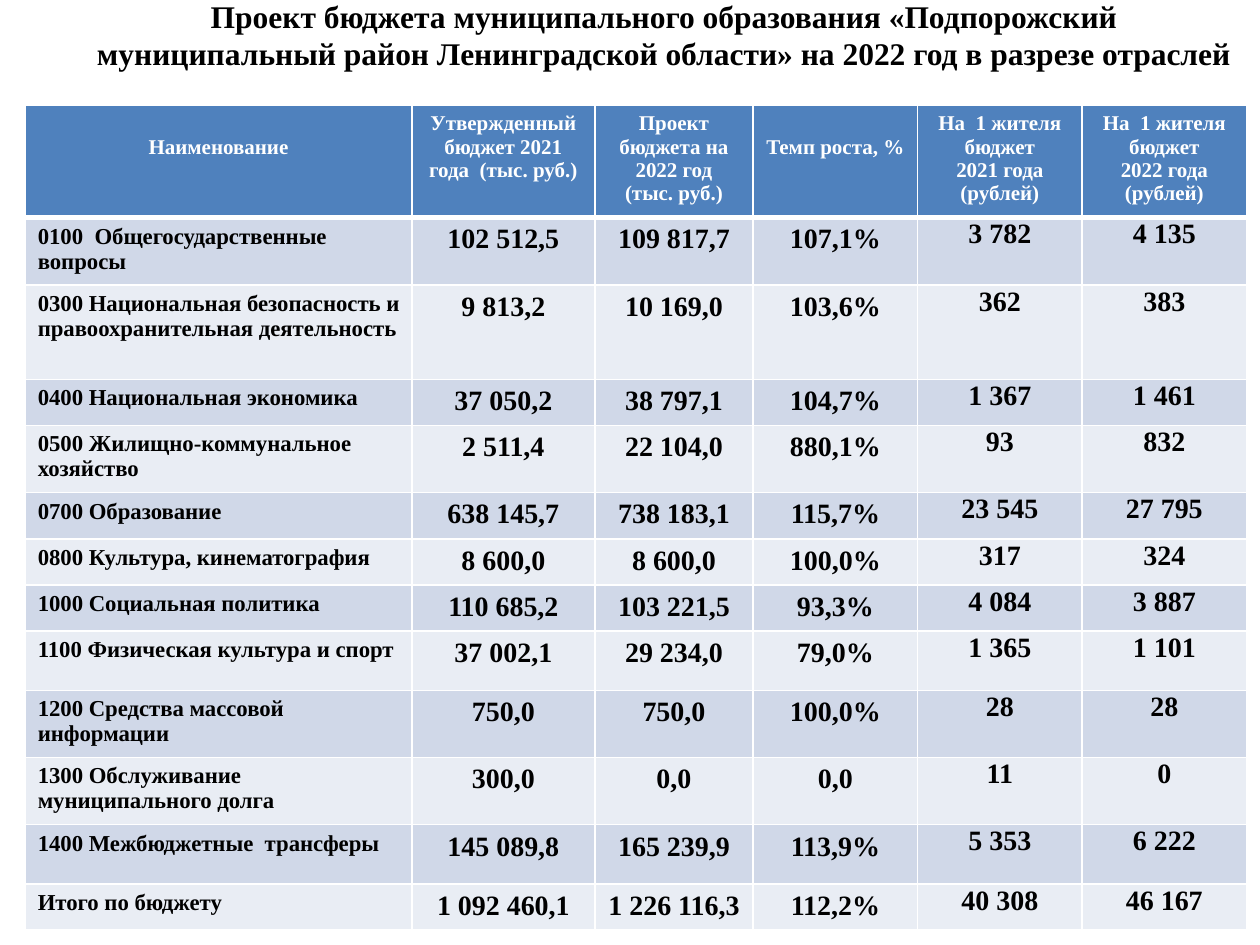
from lxml.etree import SubElement
from pptx import Presentation
from pptx.dml.color import RGBColor as Rgb
from pptx.enum.text import MSO_ANCHOR as Anchor, MSO_AUTO_SIZE as AutoSize, PP_ALIGN as Align
from pptx.oxml.ns import qn
from pptx.util import Pt

COLORS = {"header": "4F81BD", "band": "D0D8E8", "plain": "E9EDF4",
          "white": "FFFFFF", "black": "000000"}
TITLE = ("Проект бюджета муниципального образования «Подпорожский муниципальный район "
         "Ленинградской области» на 2022 год в разрезе отраслей")
HEADERS = ["Наименование", "Утвержденный бюджет 2021 года  (тыс. руб.)",
           "Проект бюджета на 2022 год\n(тыс. руб.)", "Темп роста, %",
           "На  1 жителя бюджет\n2021 года (рублей)",
           "На  1 жителя бюджет\n2022 года\n(рублей)"]
COLUMN_WIDTHS = [221, 104.5, 90.5, 94, 94, 94]
HEADER_HEIGHT = 64
# Row height, then the cells of the row
BUDGET = [
    (38.4, "0100  Общегосударственные вопросы", "102 512,5", "109 817,7", "107,1%", "3 782", "4 135"),
    (54, "0300 Национальная безопасность и правоохранительная деятельность",
     "9 813,2", "10 169,0", "103,6%", "362", "383"),
    (26.4, "0400 Национальная экономика", "37 050,2", "38 797,1", "104,7%", "1 367", "1 461"),
    (38.4, "0500 Жилищно-коммунальное хозяйство", "2 511,4", "22 104,0", "880,1%", "93", "832"),
    (26.4, "0700 Образование", "638 145,7", "738 183,1", "115,7%", "23 545", "27 795"),
    (26.4, "0800 Культура, кинематография", "8 600,0", "8 600,0", "100,0%", "317", "324"),
    (26.4, "1000 Социальная политика", "110 685,2", "103 221,5", "93,3%", "4 084", "3 887"),
    (33.8, "1100 Физическая культура и спорт", "37 002,1", "29 234,0", "79,0%", "1 365", "1 101"),
    (38.4, "1200 Средства массовой информации", "750,0", "750,0", "100,0%", "28", "28"),
    (38.4, "1300 Обслуживание муниципального долга", "300,0", "0,0", "0,0", "11", "0"),
    (33.8, "1400 Межбюджетные  трансферы", "145 089,8", "165 239,9", "113,9%", "5 353", "6 222"),
    (26.4, "Итого по бюджету", "1 092 460,1", "1 226 116,3", "112,2%", "40 308", "46 167"),
]


class BudgetPage:
    """Holds the text style and the slide being filled."""
    font_name = "Times New Roman"

    def __init__(self, deck):
        self.page = deck.slides.add_slide(deck.slide_layouts[5])

    def style_text(self, frame, size, color="black", align=Align.CENTER):
        for para in frame.paragraphs:
            para.alignment = align
            for span in para.runs:
                span.font.name = self.font_name
                span.font.size = Pt(size)
                span.font.bold = True
                span.font.color.rgb = Rgb.from_string(COLORS[color])

    def title(self, text, left, top, width, height):
        box = self.page.shapes.title
        box.left, box.top, box.width, box.height = map(Pt, (left, top, width, height))
        frame = box.text_frame
        frame.text = text
        frame.word_wrap = True
        frame.auto_size = AutoSize.NONE
        frame.vertical_anchor = Anchor.MIDDLE
        frame.margin_left = frame.margin_right = Pt(6)
        frame.margin_top, frame.margin_bottom = Pt(0), Pt(14)
        self.style_text(frame, 18)

    def borders(self, cell, bottom):
        properties = cell._tc.get_or_add_tcPr()
        for side, width in (("L", 1), ("R", 1), ("T", 1), ("B", bottom)):
            line = SubElement(properties, qn(f"a:ln{side}"), w=str(Pt(width)))
            fill = SubElement(line, qn("a:solidFill"))
            SubElement(fill, qn("a:srgbClr"), val=COLORS["white"])

    def cell(self, cell, text, fill, size, color="black", align=Align.CENTER, bottom=1):
        self.borders(cell, bottom)
        cell.fill.solid()
        cell.fill.fore_color.rgb = Rgb.from_string(COLORS[fill])
        cell.text_frame.text = text
        self.style_text(cell.text_frame, size, color, align)

    def table(self, left, top):
        heights = [HEADER_HEIGHT] + [row[0] for row in BUDGET]
        table = self.page.shapes.add_table(
            len(heights), len(HEADERS), Pt(left), Pt(top),
            Pt(sum(COLUMN_WIDTHS)), Pt(sum(heights))).table
        table.horz_banding = False
        for column, width in zip(table.columns, COLUMN_WIDTHS):
            column.width = Pt(width)
        for row, height in zip(table.rows, heights):
            row.height = Pt(height)

        for column, text in enumerate(HEADERS):
            cell = table.cell(0, column)
            self.cell(cell, text, "header", 12, "white", bottom=3)
            if text in ("Наименование", "Темп роста, %"):
                cell.margin_top = Pt(17.4)

        for number, (_, name, *values) in enumerate(BUDGET, 1):
            fill = "band" if number % 2 else "plain"
            self.cell(table.cell(number, 0), name, fill, 13, align=Align.LEFT)
            for column, value in enumerate(values, 1):
                cell = table.cell(number, column)
                self.cell(cell, value, fill, 16)
                if column >= 4:
                    cell.margin_left = cell.margin_right = cell.margin_top = Pt(0.7)
                    cell.margin_bottom = Pt(0)


def main():
    deck = Presentation()
    deck.slide_width, deck.slide_height = Pt(720), Pt(540)
    page = BudgetPage(deck)
    page.title(TITLE, 48, 0.7, 663, 52)
    page.table(14.4, 60.4)
    deck.save("out.pptx")


if __name__ == "__main__":
    main()
